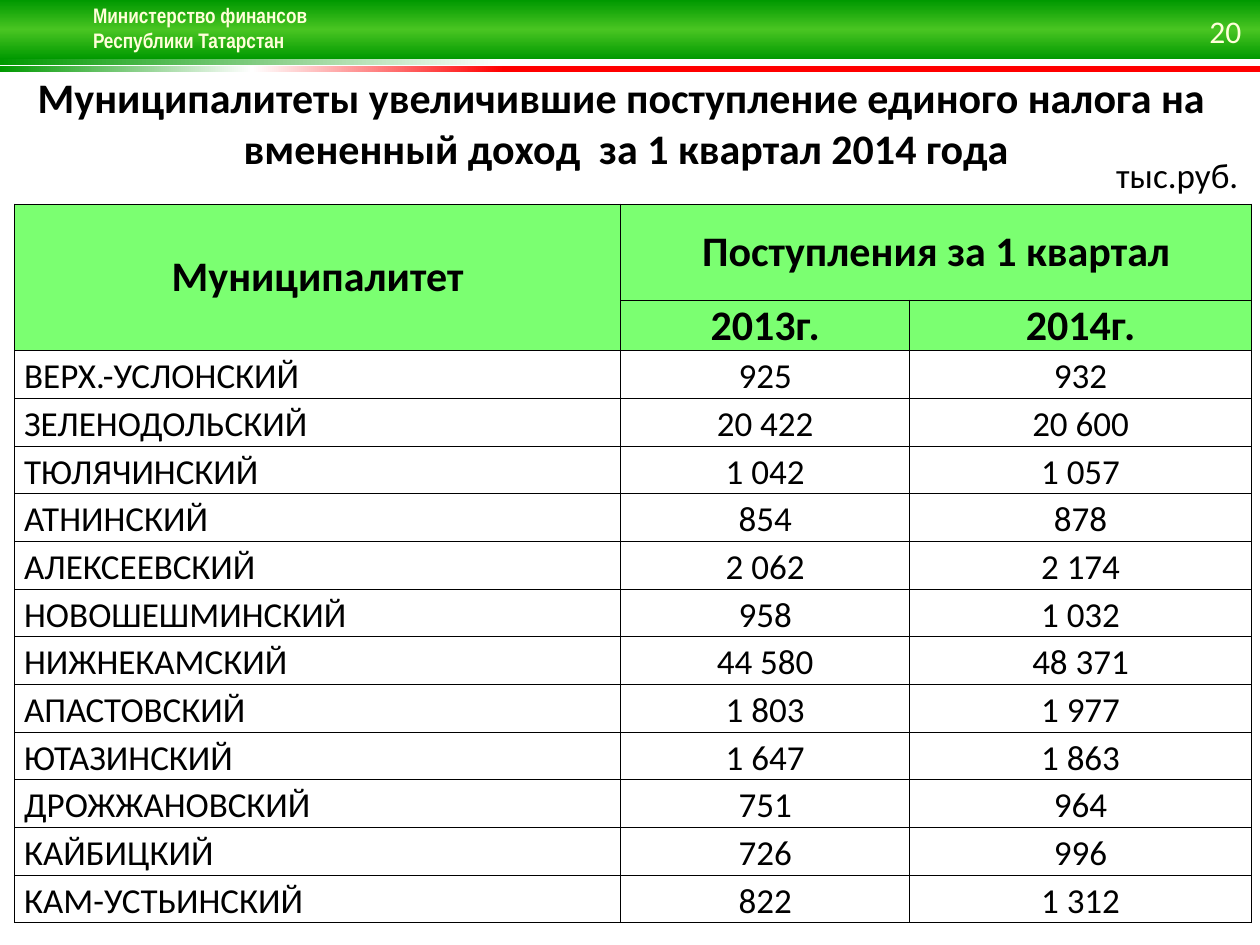
from dataclasses import dataclass

import lxml.etree
import pptx
import pptx.dml.color
import pptx.enum.shapes
import pptx.enum.text
import pptx.oxml
import pptx.oxml.ns
import pptx.util

Pt = pptx.util.Pt
Align = pptx.enum.text.PP_ALIGN
Anchor = pptx.enum.text.MSO_ANCHOR
qn = pptx.oxml.ns.qn

HUES = {
    "white": "FFFFFF", "black": "000000", "cream": "FFFFD9", "red": "FF0000",
    "green": "009900", "lime": "49C522", "head": "7BFF71",
}


@dataclass
class Band:
    top: float
    high: float
    angle: int
    stops: list[tuple[int, str]]


@dataclass
class Label:
    text: str
    box: tuple[float, float, float, float]
    size: float
    hue: str = "black"
    face: str = "Calibri"
    bold: bool = False
    align: Align = Align.LEFT
    wrap: bool = True
    shade: bool = False


BANDS = [
    Band(33.84, 3.6, 180, [(0, "white"), (60, "white"), (100, "green")]),
    Band(37.44, 3.6, 180, [(60, "red"), (80, "white"), (100, "green")]),
    Band(0, 33.84, 270, [(0, "green"), (50, "lime"), (100, "green")]),
]

LABELS = [
    Label("Министерство финансов\vРеспублики Татарстан", (46.08, -2.16, 138.24, 51.12),
          12, "cream", "Arial Narrow", bold=True, shade=True),
    Label("Муниципалитеты увеличившие поступление единого налога на \v"
          "вмененный доход  за 1 квартал 2014 года", (-2.16, 37.44, 720, 62.64),
          24, bold=True, align=Align.CENTER),
    Label("20", (684, 3.6, 33.84, 24.48), 18, "cream", wrap=False),
    Label("тыс.руб.", (630.72, 84.24, 84.96, 31.68), 20, wrap=False),
]

WIDTHS = [346.5, 165, 195.5]
TOP_ROW, ROW = 54.9, 27.25
HEADS = [["Муниципалитет", "Поступления за 1 квартал", ""], ["", "2013г.", "2014г."]]
ROWS = [
    ["ВЕРХ.-УСЛОНСКИЙ", "925", "932"],
    ["ЗЕЛЕНОДОЛЬСКИЙ", "20 422", "20 600"],
    ["ТЮЛЯЧИНСКИЙ", "1 042", "1 057"],
    ["АТНИНСКИЙ", "854", "878"],
    ["АЛЕКСЕЕВСКИЙ", "2 062", "2 174"],
    ["НОВОШЕШМИНСКИЙ", "958", "1 032"],
    ["НИЖНЕКАМСКИЙ", "44 580", "48 371"],
    ["АПАСТОВСКИЙ", "1 803", "1 977"],
    ["ЮТАЗИНСКИЙ", "1 647", "1 863"],
    ["ДРОЖЖАНОВСКИЙ", "751", "964"],
    ["КАЙБИЦКИЙ", "726", "996"],
    ["КАМ-УСТЬИНСКИЙ", "822", "1 312"],
]


def paint(hue: str) -> pptx.dml.color.RGBColor:
    return pptx.dml.color.RGBColor.from_string(HUES[hue])


def style(para, size: float, hue: str, face: str, bold: bool, align: Align) -> None:
    para.alignment = align
    font = para.font
    font.size, font.bold, font.name = Pt(size), bold, face
    font.color.rgb = paint(hue)


def add_band(slide, band: Band) -> None:
    shape = slide.shapes.add_shape(pptx.enum.shapes.MSO_SHAPE.RECTANGLE,
                                   0, Pt(band.top), Pt(720), Pt(band.high))
    shape.shadow.inherit = False
    shape.line.fill.background()
    shape.fill.gradient()
    shape.fill.gradient_angle = band.angle
    # Swap the preset stops for those of the band
    stops = shape._element.spPr.find(".//" + qn("a:gsLst"))
    for old in list(stops):
        stops.remove(old)
    for pos, hue in band.stops:
        stop = lxml.etree.SubElement(stops, qn("a:gs"), pos=str(pos * 1000))
        lxml.etree.SubElement(stop, qn("a:srgbClr"), val=HUES[hue])


def add_label(slide, label: Label) -> None:
    frame = slide.shapes.add_textbox(*map(Pt, label.box)).text_frame
    frame.word_wrap = label.wrap
    para = frame.paragraphs[0]
    para.text = label.text
    style(para, label.size, label.hue, label.face, label.bold, label.align)
    if label.shade:
        latin = para._p.find(".//" + qn("a:latin"))
        glow = pptx.oxml.parse_xml(
            f'<a:effectLst {pptx.oxml.ns.nsdecls("a")}>'
            '<a:outerShdw blurRad="38100" dist="38100" dir="2700000">'
            f'<a:srgbClr val="{HUES["black"]}"/></a:outerShdw></a:effectLst>')
        latin.addprevious(glow)


def add_edges(cell) -> None:
    props = cell._tc.get_or_add_tcPr()
    for side in ("lnL", "lnR", "lnT", "lnB"):
        line = lxml.etree.SubElement(props, qn("a:" + side), w=str(Pt(0.5)))
        fill = lxml.etree.SubElement(line, qn("a:solidFill"))
        lxml.etree.SubElement(fill, qn("a:srgbClr"), val=HUES["black"])


def fill_cell(cell, text: str, head: bool, first: bool) -> None:
    add_edges(cell)
    if head:
        cell.fill.solid()
        cell.fill.fore_color.rgb = paint("head")
    else:
        cell.fill.background()
    side = 5.76 if head else 0.72
    cell.margin_left = Pt(5.5 if first and not head else side)
    cell.margin_right = Pt(side)
    cell.margin_top = cell.margin_bottom = 0
    cell.vertical_anchor = Anchor.MIDDLE if head else Anchor.BOTTOM
    para = cell.text_frame.paragraphs[0]
    para.text = text
    align = Align.LEFT if first and not head else Align.CENTER
    style(para, 24 if head else 20, "black", "Calibri", head, align)


def add_grid(slide) -> None:
    data = HEADS + ROWS
    high = TOP_ROW + ROW * (len(data) - 1)
    grid = slide.shapes.add_table(len(data), len(WIDTHS), Pt(8.3), Pt(116.64),
                                  Pt(sum(WIDTHS)), Pt(high)).table
    grid.first_row = grid.horz_banding = False
    for col, width in zip(grid.columns, WIDTHS):
        col.width = Pt(width)
    for r, texts in enumerate(data):
        grid.rows[r].height = Pt(ROW if r else TOP_ROW)
        for c, text in enumerate(texts):
            fill_cell(grid.cell(r, c), text, r < len(HEADS), c == 0)
    grid.cell(0, 0).merge(grid.cell(1, 0))
    grid.cell(0, 1).merge(grid.cell(0, 2))


def main() -> None:
    deck = pptx.Presentation()
    deck.slide_width, deck.slide_height = Pt(720), Pt(540)
    slide = deck.slides.add_slide(deck.slide_layouts[6])
    # Header bands
    for band in BANDS:
        add_band(slide, band)
    # Header, title, page number and unit
    for label in LABELS:
        add_label(slide, label)
    # Revenue by municipality
    add_grid(slide)
    deck.save("out.pptx")


if __name__ == "__main__":
    main()
